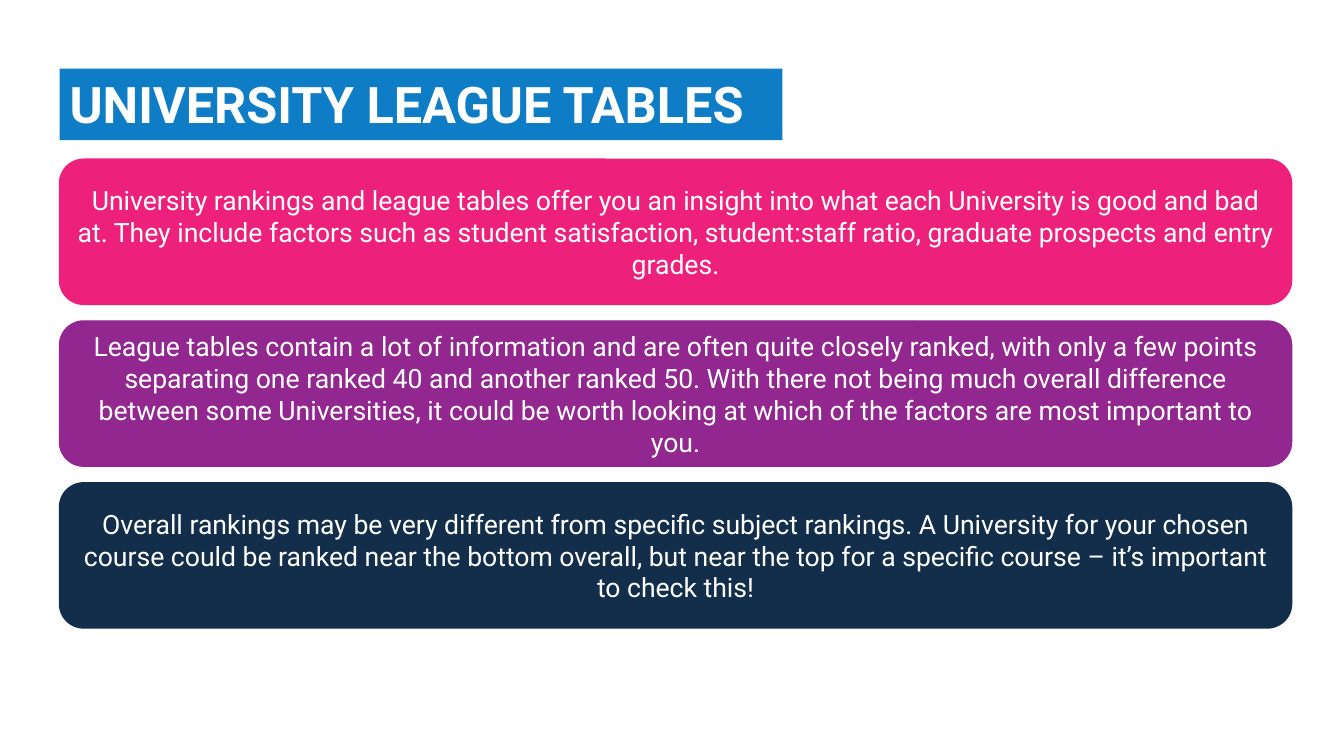
import pptx
import pptx.util
import pptx.dml.color
import pptx.enum.shapes
import pptx.enum.text

Inches = pptx.util.Inches
Pt = pptx.util.Pt
Color = pptx.dml.color.RGBColor.from_string
Align = pptx.enum.text.PP_ALIGN
Anchor = pptx.enum.text.MSO_ANCHOR

TITLE = "UNIVERSITY LEAGUE TABLES"
CARDS = [
    ("pink", "University rankings and league tables offer you an insight into what each "
     "University is good and bad at. They include factors such as student satisfaction, "
     "student:staff ratio, graduate prospects and entry grades."),
    ("purple", "League tables contain a lot of information and are often quite closely ranked, "
     "with only a few points separating one ranked 40 and another ranked 50. With there not "
     "being much overall difference between some Universities, it could be worth looking at "
     "which of the factors are most important to you."),
    ("navy", "Overall rankings may be very different from specific subject rankings. A University "
     "for your chosen course could be ranked near the bottom overall, but near the top for a "
     "specific course – it’s important to check this!"),
]

THEME = {
    "blue": Color("0F7CC6"),
    "pink": Color("ED217C"),
    "purple": Color("92278F"),
    "navy": Color("132E4B"),
    "title_font": {"name": "Roboto", "size": Pt(36), "bold": True},
    "card_font": {"name": "Roboto", "size": Pt(19), "bold": False},
    "text": Color("FFFFFF"),
}

LEFT = 0.59
TITLE_BOX = {"left": Inches(LEFT), "top": Inches(0.68),
             "width": Inches(7.17), "height": Inches(0.71)}
CARD_TOP, CARD_WIDTH, CARD_HEIGHT, CARD_GAP = 1.58, 12.22, 1.44, 0.165


def set_values(target, values):
    for name, value in values.items():
        setattr(target, name, value)


def fill_shape(shape, color):
    shape.fill.solid()
    shape.fill.fore_color.rgb = color


def write_text(shape, text, font, alignment, anchor):
    frame = shape.text_frame
    set_values(frame, {"text": text, "word_wrap": True, "vertical_anchor": anchor,
                       "auto_size": pptx.enum.text.MSO_AUTO_SIZE.NONE})
    paragraph = frame.paragraphs[0]
    paragraph.alignment = alignment
    run = paragraph.runs[0]
    set_values(run.font, font)
    run.font.color.rgb = THEME["text"]


def add_title(slide):
    title = slide.shapes.title
    set_values(title, TITLE_BOX)
    fill_shape(title, THEME["blue"])
    write_text(title, TITLE, THEME["title_font"], Align.LEFT, Anchor.TOP)


def add_card(slide, index, color, text):
    top = CARD_TOP + index * (CARD_HEIGHT + CARD_GAP)
    card = slide.shapes.add_shape(
        pptx.enum.shapes.MSO_SHAPE.ROUNDED_RECTANGLE,
        Inches(LEFT), Inches(top), Inches(CARD_WIDTH), Inches(CARD_HEIGHT))
    card.shadow.inherit = False
    fill_shape(card, THEME[color])
    card.line.color.rgb = THEME[color]
    card.line.width = Pt(1)
    write_text(card, text, THEME["card_font"], Align.CENTER, Anchor.MIDDLE)


def main():
    presentation = pptx.Presentation()
    set_values(presentation, {"slide_width": Inches(13.33), "slide_height": Inches(7.5)})
    slide = presentation.slides.add_slide(presentation.slide_layouts.get_by_name("Title Only"))
    add_title(slide)
    for index, (color, text) in enumerate(CARDS):
        add_card(slide, index, color, text)
    presentation.save("out.pptx")


if __name__ == "__main__":
    main()
